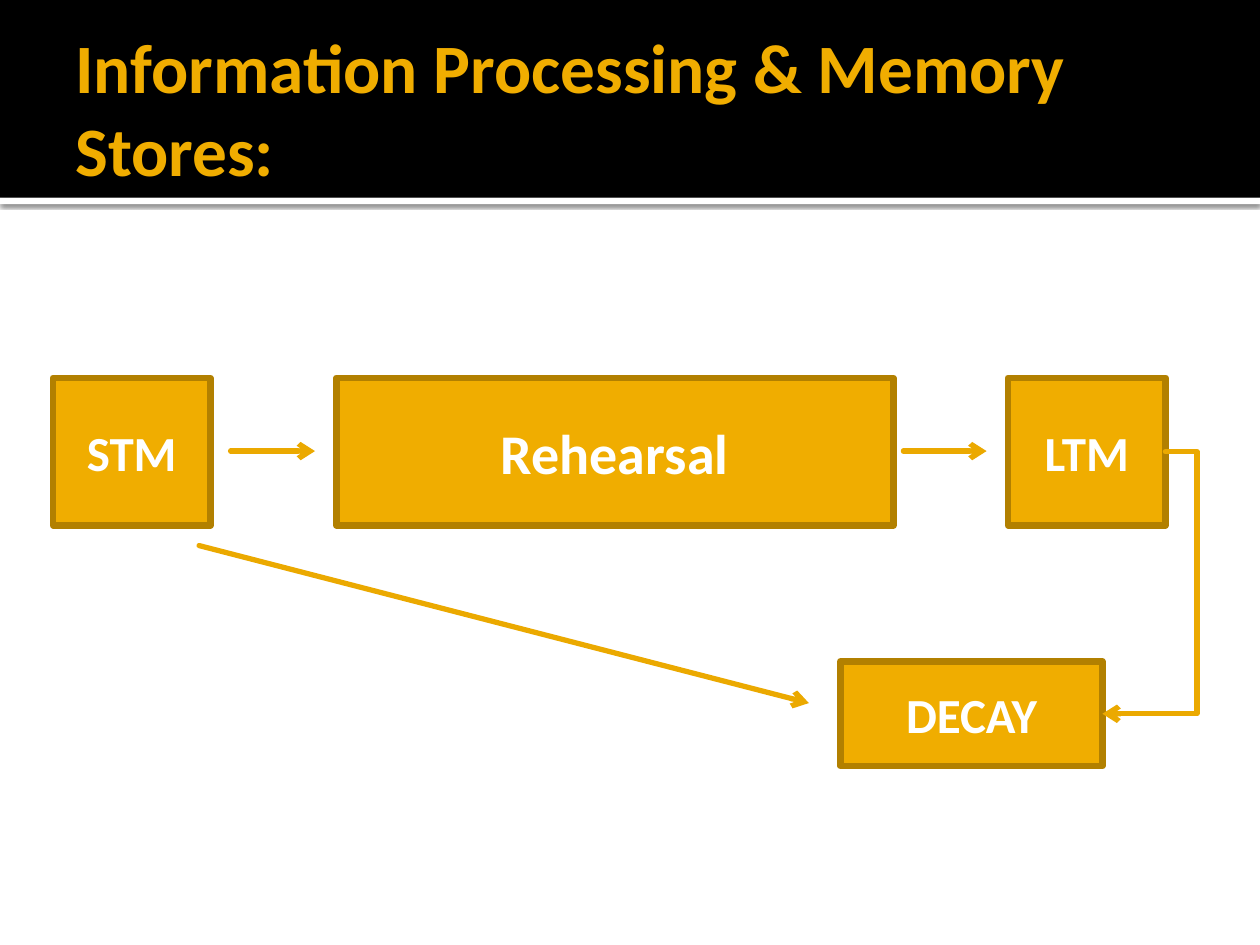
from lxml.etree import SubElement
from pptx import Presentation
from pptx.dml.color import RGBColor
from pptx.enum.shapes import MSO_CONNECTOR, MSO_SHAPE
from pptx.enum.text import MSO_ANCHOR, PP_ALIGN
from pptx.oxml.ns import qn
from pptx.util import Inches, Pt

COLORS = {
    "gold": "F0AD00",
    "border": "B28000",
    "arrow": "EBA900",
    "black": "000000",
    "white": "FFFFFF",
}
FONT = "Calibri"
TITLE = "Information Processing & Memory Stores:"
HEADER_HEIGHT, STRIP_HEIGHT = 1.57, 0.05
ROW_TOP, ROW_HEIGHT = 3, 1.17
ARROW_Y = 3.58

BOXES = [
    ("Rehearsal", 2.67, ROW_TOP, 4.42, ROW_HEIGHT, 32),
    ("STM", 0.42, ROW_TOP, 1.25, ROW_HEIGHT, 28),
    ("LTM", 8, ROW_TOP, 1.25, ROW_HEIGHT, 28),
    ("DECAY", 6.67, 5.25, 2.08, 0.83, 28),
]
ARROWS = [
    (1.83, ARROW_Y, 2.5, ARROW_Y),
    (7.17, ARROW_Y, 7.83, ARROW_Y),
    (1.58, 4.33, 6.42, 5.58),
]


def color(name):
    return RGBColor.from_string(COLORS[name])


def write_text(shape, text, size, color_name, align=PP_ALIGN.CENTER):
    frame = shape.text_frame
    frame.word_wrap = True
    frame.vertical_anchor = MSO_ANCHOR.MIDDLE
    paragraph = frame.paragraphs[0]
    paragraph.alignment = align
    run = paragraph.add_run()
    run.text = text
    run.font.name = FONT
    run.font.size = Pt(size)
    run.font.bold = True
    run.font.color.rgb = color(color_name)


def add_rectangle(slide, left, top, width, height, fill, border=None):
    shape = slide.shapes.add_shape(
        MSO_SHAPE.RECTANGLE, Inches(left), Inches(top), Inches(width), Inches(height)
    )
    shape.shadow.inherit = False
    shape.fill.solid()
    shape.fill.fore_color.rgb = color(fill)
    if border:
        shape.line.color.rgb = color(border)
        shape.line.width = Pt(3.78)
    else:
        shape.line.fill.background()
    return shape


def add_strip_shadow(shape):
    effects = shape._element.spPr.find(qn("a:effectLst"))
    shadow = SubElement(
        effects, qn("a:outerShdw"), blurRad=str(Pt(2.5)), dist=str(Pt(0.8)),
        dir="5400000", algn="t", rotWithShape="0",
    )
    shade = SubElement(shadow, qn("a:srgbClr"), val=COLORS["black"])
    SubElement(shade, qn("a:alpha"), val="60000")


def add_arrow(slide, x1, y1, x2, y2, kind=MSO_CONNECTOR.STRAIGHT):
    arrow = slide.shapes.add_connector(kind, Inches(x1), Inches(y1), Inches(x2), Inches(y2))
    arrow.line.color.rgb = color("arrow")
    arrow.line.width = Pt(3)
    properties = arrow._element.spPr
    line = properties.find(qn("a:ln"))
    line.set("cap", "rnd")
    SubElement(line, qn("a:round"))
    SubElement(line, qn("a:tailEnd"), type="arrow")
    SubElement(properties, qn("a:effectLst"))
    return arrow


def add_decay_arrow(slide, start, end):
    arrow = add_arrow(slide, 9.25, ARROW_Y, 8.75, 5.67, MSO_CONNECTOR.ELBOW)
    arrow.begin_connect(start, 3)
    arrow.end_connect(end, 3)
    adjustments = arrow._element.spPr.find(qn("a:prstGeom")).find(qn("a:avLst"))
    SubElement(adjustments, qn("a:gd"), name="adj1", fmla="val -50000")


def main():
    presentation = Presentation()
    presentation.slide_width, presentation.slide_height = Inches(10), Inches(7.5)
    slide = presentation.slides.add_slide(presentation.slide_layouts[6])

    strip = add_rectangle(slide, 0, HEADER_HEIGHT, 10, STRIP_HEIGHT, "white")
    add_strip_shadow(strip)
    add_rectangle(slide, 0, 0, 10, HEADER_HEIGHT, "black")

    title = slide.shapes.add_textbox(Inches(0.5), Inches(0.17), Inches(9), Inches(1.37))
    title.text_frame.margin_right = Inches(0.05)
    write_text(title, TITLE, size=39.6, color_name="gold", align=PP_ALIGN.LEFT)

    boxes = {}
    for text, left, top, width, height, size in BOXES:
        boxes[text] = add_rectangle(slide, left, top, width, height, "gold", border="border")
        write_text(boxes[text], text, size=size, color_name="white")

    for ends in ARROWS:
        add_arrow(slide, *ends)
    add_decay_arrow(slide, boxes["LTM"], boxes["DECAY"])

    presentation.save("out.pptx")


if __name__ == "__main__":
    main()
